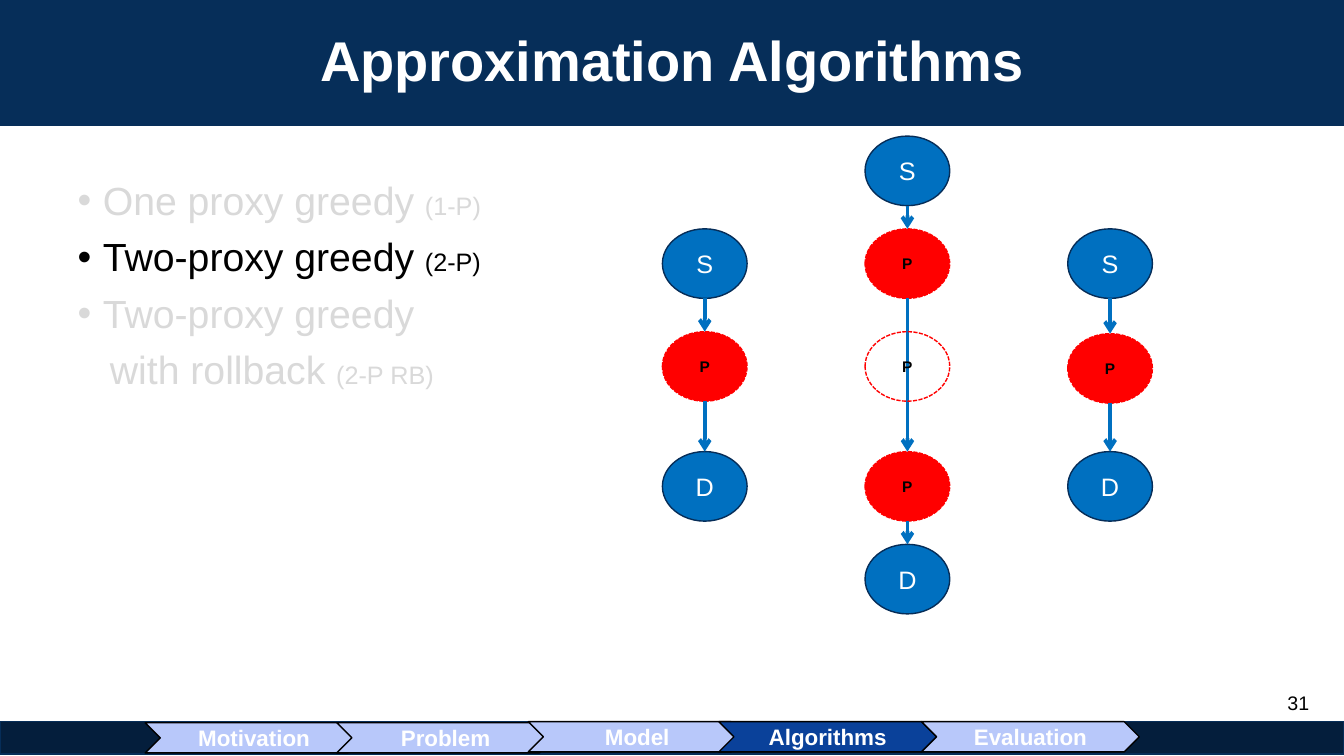
from itertools import pairwise

from lxml import etree
from pptx import Presentation
from pptx.dml.color import RGBColor
from pptx.enum.dml import MSO_LINE
from pptx.enum.shapes import MSO_CONNECTOR, MSO_SHAPE
from pptx.enum.text import MSO_ANCHOR, MSO_AUTO_SIZE, PP_ALIGN
from pptx.oxml.ns import qn
from pptx.util import Inches, Pt

TITLE = "Approximation Algorithms"
PAGE_NUMBER = "31"
FADED, ACTIVE = "D9D9D9", "000000"
# main text, abbreviation, colour, has a bullet
ALGORITHMS = [
    ("One proxy greedy ", "(1-P)", FADED, True),
    ("Two-proxy greedy ", "(2-P)", ACTIVE, True),
    ("Two-proxy greedy", "", FADED, True),
    ("with rollback ", "(2-P RB)", FADED, False),
]
# centre of each path, then its nodes from top to bottom
PATHS = [
    (6.99, [("S", 2.27), ("P", 3.29), ("D", 4.48)]),
    (9.0, [("S", 1.35), ("P", 2.27), ("P", 4.48), ("D", 5.4)]),
    (11.01, [("S", 2.27), ("P", 3.31), ("D", 4.48)]),
]
SKIPPED_PROXY = (9.0, 3.29)
NODE_WIDTH, NODE_HEIGHT = 0.84, 0.69
# fill, outline, text size, text colour, bold
NODE_STYLES = {
    "S": ("0070C0", "062D58", 18, "FFFFFF", False),
    "P": ("FF0000", "FF0000", 11, "000000", True),
    "D": ("0070C0", "062D58", 18, "FFFFFF", False),
}
CHAPTERS = [
    ("Motivation", 1.44, 7.17),
    ("Problem", 3.34, 7.17),
    ("Model", 5.24, 7.16),
    ("Algorithms", 7.13, 7.16),
    ("Evaluation", 9.14, 7.16),
]
CURRENT_CHAPTER = "Algorithms"


def color(value):
    return RGBColor.from_string(value)


def add_text(paragraph, text, size, text_color, bold=False):
    run = paragraph.add_run()
    run.text = text
    run.font.name = "Arial"
    run.font.size = Pt(size)
    run.font.bold = bold
    run.font.color.rgb = color(text_color)


def place(shape, left, top, width, height):
    shape.left, shape.top = Inches(left), Inches(top)
    shape.width, shape.height = Inches(width), Inches(height)


def add_box(kind, box, fill, outline, text="", dashed=False, **text_format):
    """Add a preset shape with centred text; a fill of None leaves it hollow."""
    shape = slide.shapes.add_shape(kind, *map(Inches, box))
    shape.shadow.inherit = False
    if fill:
        shape.fill.solid()
        shape.fill.fore_color.rgb = color(fill)
    else:
        shape.fill.background()
    shape.line.color.rgb = color(outline)
    shape.line.width = Pt(1)
    if dashed:
        shape.line.dash_style = MSO_LINE.SQUARE_DOT
    if text:
        frame = shape.text_frame
        frame.margin_left = frame.margin_right = 0
        frame.margin_top = frame.margin_bottom = 0
        frame.vertical_anchor = MSO_ANCHOR.MIDDLE
        paragraph = frame.paragraphs[0]
        paragraph.alignment = PP_ALIGN.CENTER
        add_text(paragraph, text, **text_format)


def add_node(label, center, top, hollow=False):
    fill, outline, size, text_color, bold = NODE_STYLES[label]
    box = (center - NODE_WIDTH / 2, top, NODE_WIDTH, NODE_HEIGHT)
    add_box(MSO_SHAPE.OVAL, box, None if hollow else fill, outline, label,
            dashed=label == "P", size=size, text_color=text_color, bold=bold)


def add_down_arrow(center, start, end):
    x = Inches(center)
    arrow = slide.shapes.add_connector(
        MSO_CONNECTOR.STRAIGHT, x, Inches(start), x, Inches(end))
    arrow.line.color.rgb = color("0070C0")
    arrow.line.width = Pt(2.75)
    properties = arrow.element.spPr
    etree.SubElement(properties.find(qn("a:ln")), qn("a:tailEnd"), type="arrow")
    etree.SubElement(properties, qn("a:effectLst"))


def set_indent(paragraph, left, first, bullet):
    properties = paragraph._p.get_or_add_pPr()
    properties.set("marL", str(Inches(left)))
    properties.set("indent", str(Inches(first)))
    if bullet:
        etree.SubElement(properties, qn("a:buFont"), typeface="Arial")
        etree.SubElement(properties, qn("a:buChar"), char="•")
    else:
        etree.SubElement(properties, qn("a:buNone"))


presentation = Presentation()
presentation.slide_width = Inches(13.33)
presentation.slide_height = Inches(7.5)
slide = presentation.slides.add_slide(presentation.slide_layouts[1])

title = slide.shapes.title
place(title, 0, 0, 13.33, 1.25)
title.fill.solid()
title.fill.fore_color.rgb = color("062E59")
title.text_frame.auto_size = MSO_AUTO_SIZE.NONE
title.text_frame.vertical_anchor = MSO_ANCHOR.MIDDLE
heading = title.text_frame.paragraphs[0]
heading.alignment = PP_ALIGN.CENTER
heading.line_spacing = 0.9
add_text(heading, TITLE, 40, "FFFFFF", bold=True)

body = slide.placeholders[1]
place(body, 0.67, 1.75, 12, 4.95)
frame = body.text_frame
frame.auto_size = MSO_AUTO_SIZE.NONE
for index, (name, abbreviation, text_color, bullet) in enumerate(ALGORITHMS):
    paragraph = frame.add_paragraph() if index else frame.paragraphs[0]
    paragraph.line_spacing = 0.9
    paragraph.space_before = Pt(10)
    set_indent(paragraph, 0.25 if bullet else 0.32, -0.25 if bullet else 0, bullet)
    add_text(paragraph, name, 28, text_color)
    if abbreviation:
        add_text(paragraph, abbreviation, 18, text_color)

for center, nodes in PATHS:
    for label, top in nodes:
        add_node(label, center, top)
    for (_, upper), (_, lower) in pairwise(nodes):
        add_down_arrow(center, upper + NODE_HEIGHT, lower)
add_node("P", *SKIPPED_PROXY, hollow=True)

add_box(MSO_SHAPE.RECTANGLE, (0, 7.16, 13.33, 0.32), "041E3C", "062D58")
for chapter, left, top in CHAPTERS:
    fill = "0A419A" if chapter == CURRENT_CHAPTER else "B8C8FA"
    add_box(MSO_SHAPE.CHEVRON, (left, top, 2.16, 0.3), fill, "000000", chapter,
            size=16, text_color="FFFFFF", bold=True)

number = slide.shapes.add_textbox(*map(Inches, (12.67, 6.81, 0.67, 0.52)))
number.text_frame.word_wrap = True
add_text(number.text_frame.paragraphs[0], PAGE_NUMBER, 14, "000000")

presentation.save("out.pptx")
